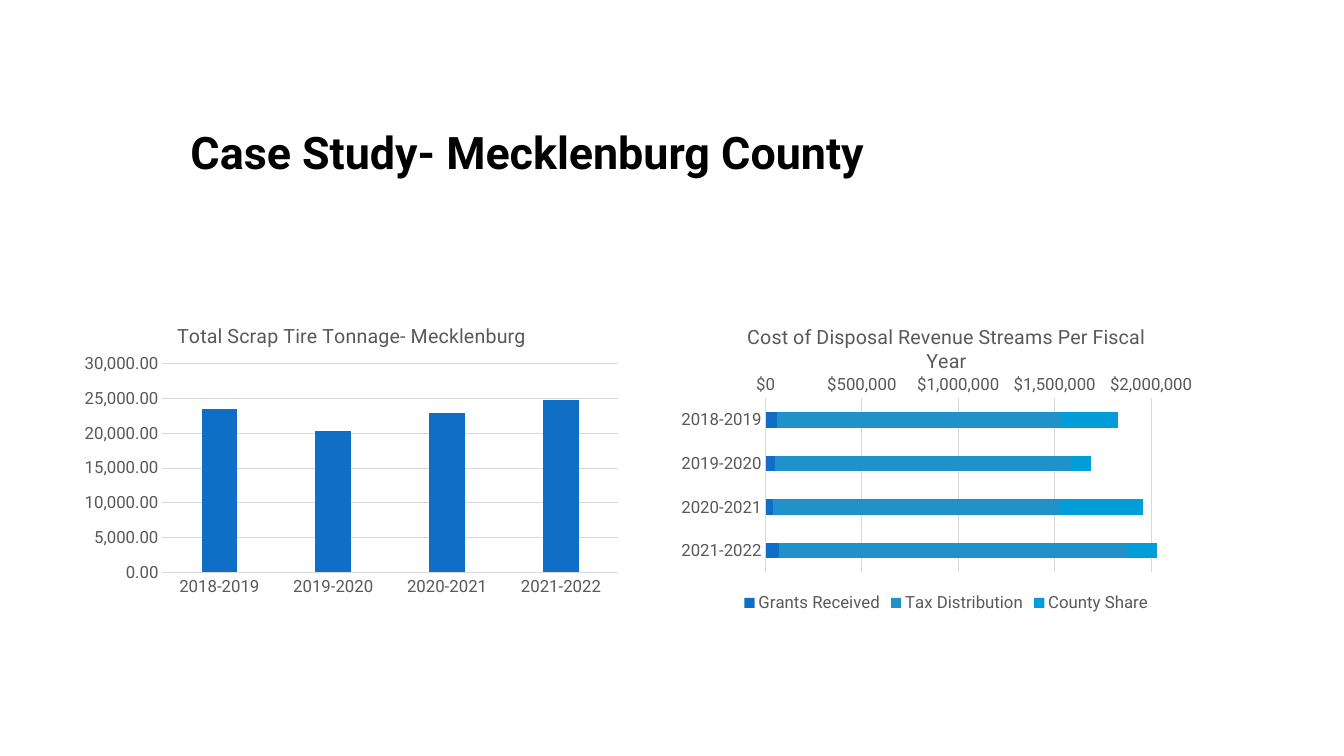
"""Build the Mecklenburg County case study slide with its two charts."""
from lxml.etree import SubElement
from pptx import Presentation
from pptx.chart.data import CategoryChartData
from pptx.dml.color import RGBColor
from pptx.enum.chart import XL_CHART_TYPE, XL_LEGEND_POSITION, XL_TICK_MARK
from pptx.enum.text import MSO_ANCHOR
from pptx.oxml.ns import qn
from pptx.util import Inches, Pt

FONT = "Roboto"
COLORS = {"black": "000000", "gray": "595959", "grid": "D9D9D9",
          "blue": "0F6FC6", "teal": "2191C9", "sky": "009DD9"}
YEARS = ["2018-2019", "2019-2020", "2020-2021", "2021-2022"]
CHARTS = [
    {"kind": XL_CHART_TYPE.COLUMN_CLUSTERED, "box": (0.73, 2.98, 5.51, 3),
     "title": "Total Scrap Tire Tonnage- Mecklenburg", "spot": (0.18, 0.06),
     "plot": (0.16, 0.21, 0.82, 0.69), "gap": 219, "overlap": -27,
     "format": "#,##0.00", "max": 30000, "unit": 5000, "stacked": False,
     "series": [("Series 1", [23500, 20400, 22900, 24800], "blue")]},
    {"kind": XL_CHART_TYPE.BAR_STACKED, "box": (6.67, 2.98, 5.43, 3.14),
     "title": "Cost of Disposal Revenue Streams Per Fiscal Year",
     "spot": (0.13, 0.06), "plot": (0.17, 0.31, 0.81, 0.55),
     "gap": 182, "overlap": 100,
     "format": '"$"#,##0', "max": 2300000, "unit": 500000, "stacked": True,
     "series": [
         ("Grants Received", [60000, 50000, 40000, 70000], "blue"),
         ("Tax Distribution", [1480000, 1540000, 1480000, 1810000], "teal"),
         ("County Share", [290000, 100000, 440000, 150000], "sky")]},
]


def style(font, size, color, bold=False):
    font.name, font.size, font.bold = FONT, Pt(size), bold
    font.color.rgb = RGBColor.from_string(COLORS[color])


def place(parent, spot, inner=False):
    for old in parent.findall(qn("c:layout")):
        parent.remove(old)
    layout = SubElement(parent, qn("c:layout"))
    manual = SubElement(layout, qn("c:manualLayout"))
    if inner:
        SubElement(manual, qn("c:layoutTarget")).set("val", "inner")
    for name in ("xMode", "yMode"):
        SubElement(manual, qn("c:" + name)).set("val", "edge")
    for name, value in zip("xywh", spot):
        SubElement(manual, qn("c:" + name)).set("val", str(value))
    parent.insert(0 if inner else 1, layout)


deck = Presentation()
deck.slide_width, deck.slide_height = Inches(13.33), Inches(7.5)
slide = deck.slides.add_slide(deck.slide_layouts[6])

box = slide.shapes.add_textbox(Inches(1.79), Inches(0.75), Inches(9.75), Inches(1.5))
frame = box.text_frame
frame.word_wrap = True
frame.vertical_anchor = MSO_ANCHOR.MIDDLE
head = frame.paragraphs[0]
head.text = "Case Study- Mecklenburg County"
style(head.font, 32, "black", True)

for item in CHARTS:
    data = CategoryChartData()
    data.categories = YEARS
    for name, values, color in item["series"]:
        data.add_series(name, values)
    bounds = [Inches(n) for n in item["box"]]
    chart = slide.shapes.add_chart(item["kind"], *bounds, data).chart
    style(chart.font, 10, "black")

    chart.has_title = True
    title = chart.chart_title
    para = title.text_frame.paragraphs[0]
    para.text = item["title"]
    style(para.font, 14, "gray")
    title.include_in_layout = False
    place(title._element, item["spot"])

    plot = chart.plots[0]
    plot.gap_width, plot.overlap = item["gap"], item["overlap"]
    plot.vary_by_categories = False
    for series, (name, values, color) in zip(plot.series, item["series"]):
        series.format.fill.solid()
        series.format.fill.fore_color.rgb = RGBColor.from_string(COLORS[color])
    place(chart._chartSpace.chart.plotArea, item["plot"], True)

    years, scale = chart.category_axis, chart.value_axis
    for axis in (years, scale):
        axis.major_tick_mark = axis.minor_tick_mark = XL_TICK_MARK.NONE
        style(axis.tick_labels.font, 12, "gray")
    years.reverse_order = item["stacked"]
    scale.has_major_gridlines = True
    for line in (years.format.line, scale.major_gridlines.format.line):
        line.color.rgb = RGBColor.from_string(COLORS["grid"])
        line.width = Pt(0.75)
    scale.format.line.fill.background()
    scale.minimum_scale, scale.maximum_scale = 0, item["max"]
    scale.major_unit = item["unit"]
    scale.tick_labels.number_format = item["format"]
    scale.tick_labels.number_format_is_linked = False

    chart.has_legend = item["stacked"]
    if chart.has_legend:
        chart.legend.position = XL_LEGEND_POSITION.BOTTOM
        chart.legend.include_in_layout = False
        style(chart.legend.font, 12, "gray")

deck.save("out.pptx")
